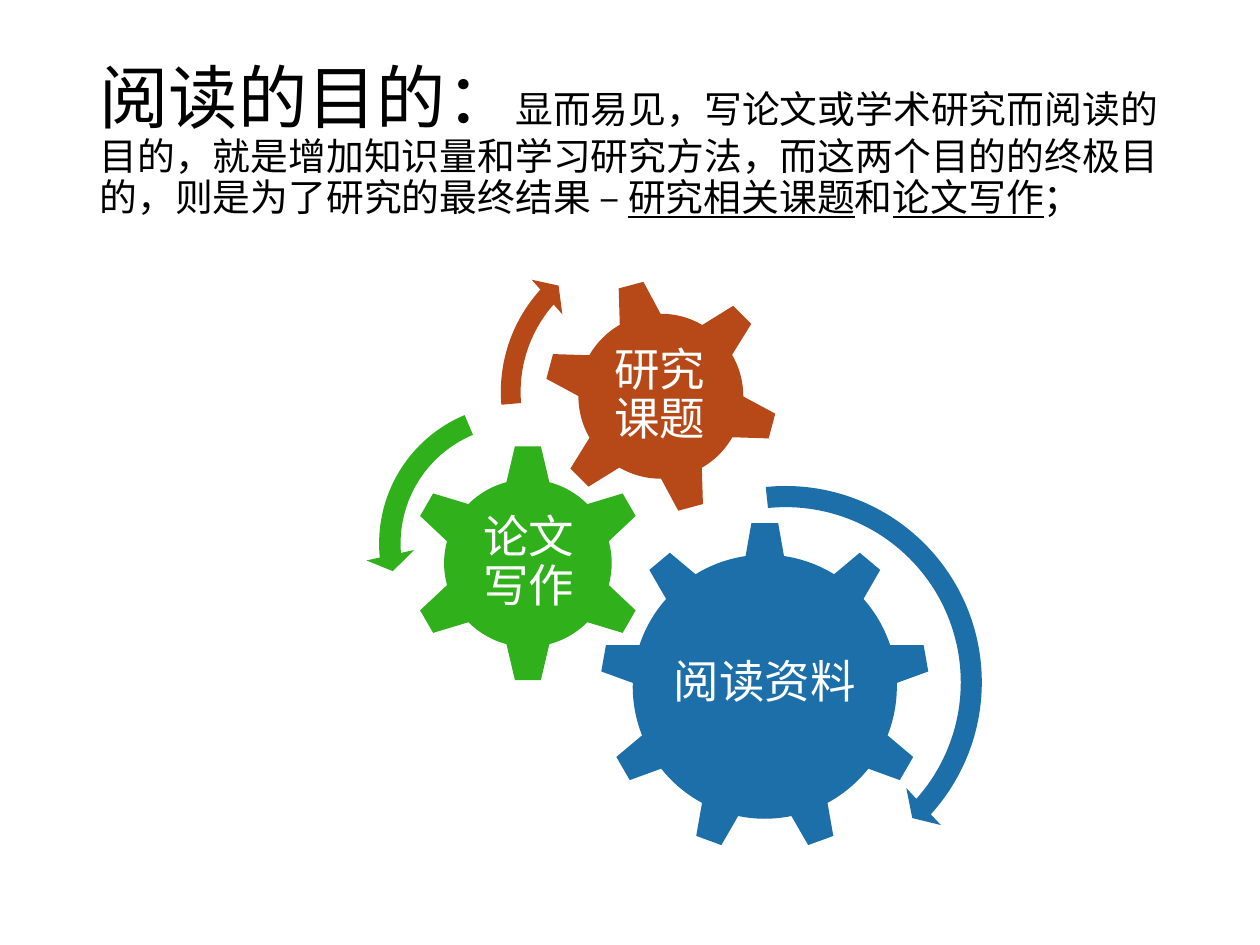
from dataclasses import dataclass

from pptx import Presentation
from pptx.dml.color import RGBColor
from pptx.enum.shapes import MSO_SHAPE
from pptx.enum.text import MSO_ANCHOR, MSO_AUTO_SIZE, PP_ALIGN
from pptx.util import Inches, Pt

GEAR_6, GEAR_9 = MSO_SHAPE.GEAR_6, MSO_SHAPE.GEAR_9
RIGHT_ARC = MSO_SHAPE.CIRCULAR_ARROW
LEFT_ARC = MSO_SHAPE.LEFT_CIRCULAR_ARROW
MIDDLE = MSO_ANCHOR.MIDDLE
LEFT, CENTER = PP_ALIGN.LEFT, PP_ALIGN.CENTER
NO_FIT = MSO_AUTO_SIZE.NONE


@dataclass(frozen=True)
class Theme:
    font: str = "Times New Roman"
    black: str = "000000"
    white: str = "FFFFFF"
    blue: str = "1D6FA9"
    green: str = "30B01B"
    rust: str = "B74919"
    head: float = 39.6
    body: float = 21.6
    label: float = 26


THEME = Theme()

# Title runs: text, size, underlined
TITLE = [
    ("阅读的目的：", THEME.head, False),
    ("显而易见，写论文或学术研究而阅读的目的，就是增加知识量和学习研究方法，"
     "而这两个目的的终极目的，则是为了研究的最终结果 – ", THEME.body, False),
    ("研究相关课题", THEME.body, True),
    ("和", THEME.body, False),
    ("论文写作", THEME.body, True),
    ("；", THEME.body, False),
]

# Gears: kind, left, top, size, turn, colour, label, label box
GEARS = [
    (GEAR_9, 4.76, 4.14, 2.62, 0, THEME.blue, "阅读资料", (5.29, 4.75, 1.56, 1.35)),
    (GEAR_6, 3.24, 3.52, 1.9, 0, THEME.green, "论文写作", (3.72, 4, 0.95, 0.94)),
    (GEAR_6, 4.31, 2.21, 1.87, 345, THEME.rust, "研究课题", (4.71, 2.62, 1.05, 1.05)),
]

# Turning arrows: kind, left, top, size, colour, adjustments
ARCS = [
    (RIGHT_ARC, 4.56, 3.74, 3.35, THEME.blue, (0.05, 2.99, 25.2, 158.53, 0.06)),
    (LEFT_ARC, 2.9, 3.1, 2.43, THEME.green, (0.07, 4.3, 104.89, 148.38, 0.08)),
    (RIGHT_ARC, 3.87, 1.8, 2.62, THEME.rust, (0.06, 3.94, 133.14, 105.08, 0.07)),
]


def style(run, size, color, line=False):
    font = run.font
    font.name, font.size, font.underline = THEME.font, Pt(size), line
    font.color.rgb = RGBColor.from_string(color)


def set_title(slide):
    title = slide.shapes.title
    title.left, title.top = Inches(0.69), Inches(0.4)
    title.width, title.height = Inches(8.62), Inches(1.45)
    frame = title.text_frame
    frame.auto_size, frame.vertical_anchor = NO_FIT, MIDDLE
    para = frame.paragraphs[0]
    para.alignment, para.line_spacing = LEFT, 0.9
    for text, size, line in TITLE:
        run = para.add_run()
        run.text = text
        style(run, size, THEME.black, line)


def add_solid(slide, kind, left, top, size, color):
    shape = slide.shapes.add_shape(
        kind, Inches(left), Inches(top), Inches(size), Inches(size))
    shape.shadow.inherit = False
    shape.fill.solid()
    shape.fill.fore_color.rgb = RGBColor.from_string(color)
    shape.line.fill.background()
    return shape


def add_label(slide, text, box):
    frame = slide.shapes.add_textbox(*map(Inches, box)).text_frame
    frame.word_wrap, frame.vertical_anchor = True, MIDDLE
    frame.margin_left = frame.margin_right = Inches(0.04)
    frame.margin_top = frame.margin_bottom = Inches(0.04)
    frame.text = text
    para = frame.paragraphs[0]
    para.alignment, para.line_spacing = CENTER, 0.9
    para.space_after = Pt(9)
    style(para.runs[0], THEME.label, THEME.white)


def add_gear(slide, kind, left, top, size, turn, color, text, box):
    add_solid(slide, kind, left, top, size, color).rotation = turn
    add_label(slide, text, box)


def add_arc(slide, kind, left, top, size, color, values):
    arc = add_solid(slide, kind, left, top, size, color)
    for i, value in enumerate(values):
        arc.adjustments[i] = value


def main():
    deck = Presentation()
    deck.slide_width, deck.slide_height = Inches(10), Inches(7.5)
    slide = deck.slides.add_slide(deck.slide_layouts[5])
    set_title(slide)
    # Meshing gears, then the arrows around them
    for gear in GEARS:
        add_gear(slide, *gear)
    for arc in ARCS:
        add_arc(slide, *arc)
    deck.save("out.pptx")


if __name__ == "__main__":
    main()
